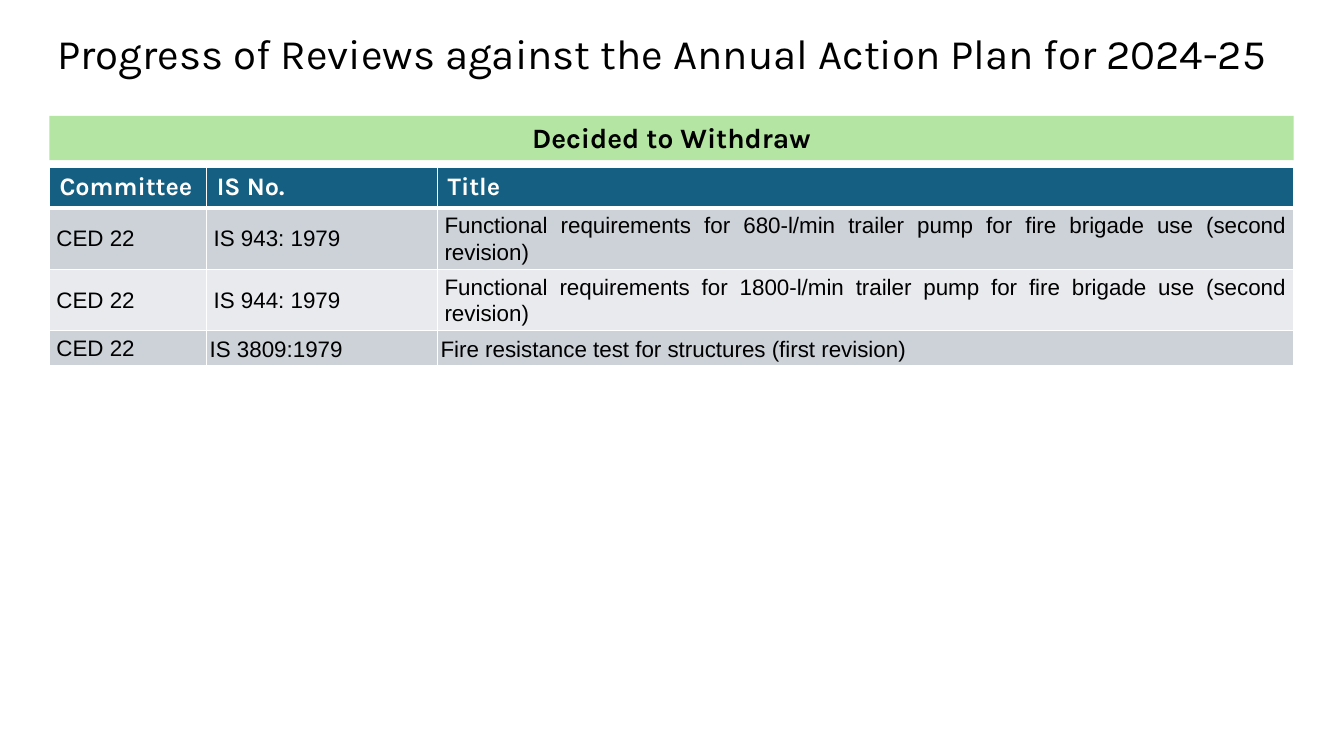
from lxml import etree
from pptx import Presentation
from pptx import util as u
from pptx.dml.color import RGBColor
from pptx.enum import shapes, text
from pptx.oxml.ns import qn

# Content
TITLE = "Progress of Reviews against the Annual Action Plan for 2024-25"
BANNER = "Decided to Withdraw"
HEADER = ["Committee", "IS No.", "Title"]
ROWS = [
    ["CED 22", "IS 943: 1979",
     "Functional requirements for 680-l/min trailer pump for fire brigade use (second revision)"],
    ["CED 22", "IS 944: 1979",
     "Functional requirements for 1800-l/min trailer pump for fire brigade use (second revision)"],
    ["CED 22", "IS 3809:1979", "Fire resistance test for structures (first revision)"],
]

# Layout and formats
LEFT, WIDTH = 0.49, 12.34
COLUMN_WIDTHS = [1.56, 2.29, 8.49]
ROW_HEIGHTS = [0.4, 0.61, 0.61, 0.34]
BAND_FILLS = ["CCD2D8", "E8EAED"]
TITLE_FONT = {"name": "Karla", "size": u.Pt(30), "bold": False}
BANNER_FONT = {"name": "Karla", "size": u.Pt(20), "bold": True}
HEADER_FONT = {"name": "Karla", "size": u.Pt(18), "bold": True}
BODY_FONT = {"name": "Arial", "size": u.Pt(16), "bold": False}
CENTER, JUSTIFY = text.PP_ALIGN.CENTER, text.PP_ALIGN.JUSTIFY


def color(value):
    return RGBColor.from_string(value)


def paint(target, value):
    target.fill.solid()
    target.fill.fore_color.rgb = color(value)


def write(frame, words, font, ink="000000", **paragraph_format):
    paragraph = frame.paragraphs[0]
    for name, value in paragraph_format.items():
        setattr(paragraph, name, value)
    run = paragraph.add_run()
    run.text = words
    for name, value in font.items():
        setattr(run.font, name, value)
    run.font.color.rgb = color(ink)


def set_borders(cell, bottom):
    properties = cell._tc.get_or_add_tcPr()
    widths = {"a:lnL": 1, "a:lnR": 1, "a:lnT": 1, "a:lnB": bottom}
    for position, (tag, width) in enumerate(widths.items()):
        line = etree.Element(qn(tag), w=str(u.Pt(width)))
        fill = etree.SubElement(line, qn("a:solidFill"))
        etree.SubElement(fill, qn("a:srgbClr"), val="FFFFFF")
        properties.insert(position, line)


presentation = Presentation()
presentation.slide_width = u.Inches(13.33)
presentation.slide_height = u.Inches(7.5)
slide = presentation.slides.add_slide(presentation.slide_layouts[6])

# Title
title = slide.shapes.add_textbox(*map(u.Inches, (0.17, 0.19, 12.8, 0.64)))
title.text_frame.word_wrap = True
title.text_frame.vertical_anchor = text.MSO_ANCHOR.BOTTOM
write(title.text_frame, TITLE, TITLE_FONT, alignment=CENTER, line_spacing=0.9)

# Banner
banner = slide.shapes.add_shape(shapes.MSO_SHAPE.RECTANGLE,
                                *map(u.Inches, (LEFT, 1.15, WIDTH, 0.44)))
banner.shadow.inherit = False
banner.line.fill.background()
paint(banner, "B4E5A2")
banner.text_frame.word_wrap = True
banner.text_frame.vertical_anchor = text.MSO_ANCHOR.TOP
write(banner.text_frame, BANNER, BANNER_FONT, alignment=CENTER)

# Table grid
table = slide.shapes.add_table(
    len(ROWS) + 1, len(HEADER),
    *map(u.Inches, (LEFT, 1.66, WIDTH, sum(ROW_HEIGHTS)))).table
for column, width in zip(table.columns, COLUMN_WIDTHS):
    column.width = u.Inches(width)
for row, height in zip(table.rows, ROW_HEIGHTS):
    row.height = u.Inches(height)

# Header row
for index, words in enumerate(HEADER):
    cell = table.cell(0, index)
    paint(cell, "156082")
    set_borders(cell, bottom=3)
    write(cell.text_frame, words, HEADER_FONT, "FFFFFF")

# Body rows; the last one has tighter side margins after its first cell
for row_index, values in enumerate(ROWS):
    for index, words in enumerate(values):
        cell = table.cell(row_index + 1, index)
        tight = row_index == len(ROWS) - 1 and index > 0
        side = u.Inches(0.03 if tight else 0.07)
        margins = {"margin_left": side, "margin_right": side,
                   "margin_top": u.Inches(0.02), "margin_bottom": u.Inches(0.02),
                   "vertical_anchor": text.MSO_ANCHOR.MIDDLE}
        for name, value in margins.items():
            setattr(cell, name, value)
        paint(cell, BAND_FILLS[row_index % 2])
        set_borders(cell, bottom=1)
        write(cell.text_frame, words, BODY_FONT,
              alignment=JUSTIFY if index == 2 else None,
              line_spacing=1.15 if tight else 1.07)

presentation.save("out.pptx")
